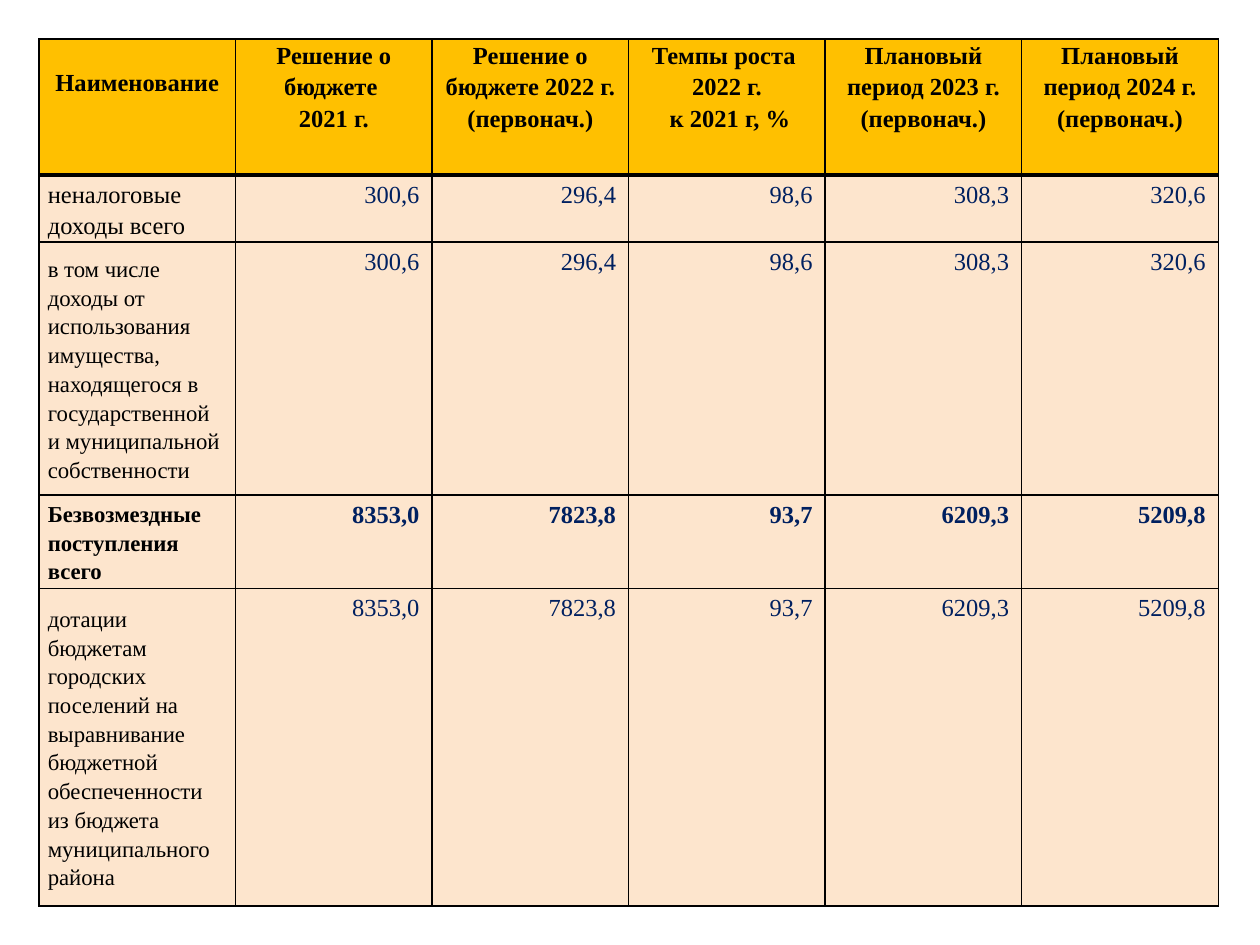
from lxml import etree
from pptx import Presentation
from pptx.dml.color import RGBColor
from pptx.enum.text import MSO_ANCHOR, PP_ALIGN
from pptx.oxml.ns import qn
from pptx.util import Inches, Pt

LEFT, MID, RIGHT = PP_ALIGN.LEFT, PP_ALIGN.CENTER, PP_ALIGN.RIGHT
TOP, CENTER = MSO_ANCHOR.TOP, MSO_ANCHOR.MIDDLE

THEME = {
    "font": "Times New Roman",
    "head": "FFC000", "body": "FDE5CD",
    "ink": "000000", "navy": "002060",
    "text": 14, "small": 13,
    "thin": 1, "thick": 3,
}

HEADS = [
    ["Наименование"],
    ["Решение о бюджете ", " 2021 г. "],
    ["Решение о бюджете 2022 г.", "(первонач.)"],
    ["Темпы роста ", "2022 г.", " к 2021 г, %"],
    ["Плановый период 2023 г.", "(первонач.)"],
    ["Плановый период 2024 г.", "(первонач.)"],
]
OWN = ["300,6", "296,4", "98,6", "308,3", "320,6"]
GRANTS = ["8353,0", "7823,8", "93,7", "6209,3", "5209,8"]
# Name, name size, bold, values, row height
ROWS = [
    ("неналоговые доходы всего", "text", False, OWN, 0.53),
    ("в том числе доходы от использования имущества, находящегося в "
     "государственной и муниципальной собственности", "small", False, OWN, 2.01),
    ("Безвозмездные поступления всего", "small", True, GRANTS, 0.74),
    ("дотации бюджетам городских поселений на выравнивание бюджетной "
     "обеспеченности из бюджета муниципального района", "small", False, GRANTS, 2.52),
]
HEAD_H = 1.08
COL_W = 1.56

# Cell formats
TIGHT = {"margin_left": Inches(0.07), "margin_right": Inches(0.07),
         "margin_top": 0, "margin_bottom": 0}
HEAD = {**TIGHT, "vertical_anchor": TOP}
NAME = {**TIGHT, "vertical_anchor": CENTER}
VALUE = {"margin_left": Inches(0.1), "margin_right": Inches(0.1),
         "margin_top": Inches(0.05), "margin_bottom": Inches(0.05),
         "vertical_anchor": TOP}


def fill_cell(cell, lines, form, fill, align, space, size, color, bold):
    for key, val in form.items():
        setattr(cell, key, val)
    cell.fill.solid()
    cell.fill.fore_color.rgb = RGBColor.from_string(THEME[fill])
    frame = cell.text_frame
    for i, line in enumerate(lines):
        para = frame.add_paragraph() if i else frame.paragraphs[0]
        para.alignment, para.line_spacing = align, space
        run = para.add_run()
        run.text = line
        look = {"name": THEME["font"], "size": Pt(THEME[size]), "bold": bold}
        for key, val in look.items():
            setattr(run.font, key, val)
        run.font.color.rgb = RGBColor.from_string(THEME[color])


def add_edges(cell, widths):
    props = cell._tc.get_or_add_tcPr()
    for side, width in widths.items():
        line = etree.SubElement(props, qn("a:ln" + side), w=str(Pt(width)))
        solid = etree.SubElement(line, qn("a:solidFill"))
        etree.SubElement(solid, qn("a:srgbClr"), val=THEME["ink"])


# Slide
deck = Presentation()
deck.slide_width, deck.slide_height = Inches(10), Inches(7.5)
slide = deck.slides.add_slide(deck.slide_layouts[6])

# Table grid
highs = [HEAD_H] + [row[-1] for row in ROWS]
table = slide.shapes.add_table(
    len(highs), len(HEADS), Inches(0.31), Inches(0.31),
    Inches(COL_W * len(HEADS)), Inches(sum(highs))).table
table.first_row = table.horz_banding = False
for col in table.columns:
    col.width = Inches(COL_W)
for row, high in zip(table.rows, highs):
    row.height = Inches(high)

# Borders, with a thick rule below the header
for r in range(len(highs)):
    for c in range(len(HEADS)):
        edges = dict.fromkeys("LRTB", THEME["thin"])
        if r < 2:
            edges["T" if r else "B"] = THEME["thick"]
        add_edges(table.cell(r, c), edges)

# Header
for c, lines in enumerate(HEADS):
    fill_cell(table.cell(0, c), lines, HEAD, "head", MID, 1.15, "text", "ink", True)
table.cell(0, 0).margin_top = Inches(0.21)

# Body
for r, (name, size, bold, values, _) in enumerate(ROWS, 1):
    fill_cell(table.cell(r, 0), [name], NAME, "body", LEFT, 1.15, size, "ink", bold)
    for c, value in enumerate(values, 1):
        fill_cell(table.cell(r, c), [value], VALUE, "body", RIGHT, 1.0,
                  "text", "navy", bold)

deck.save("out.pptx")
